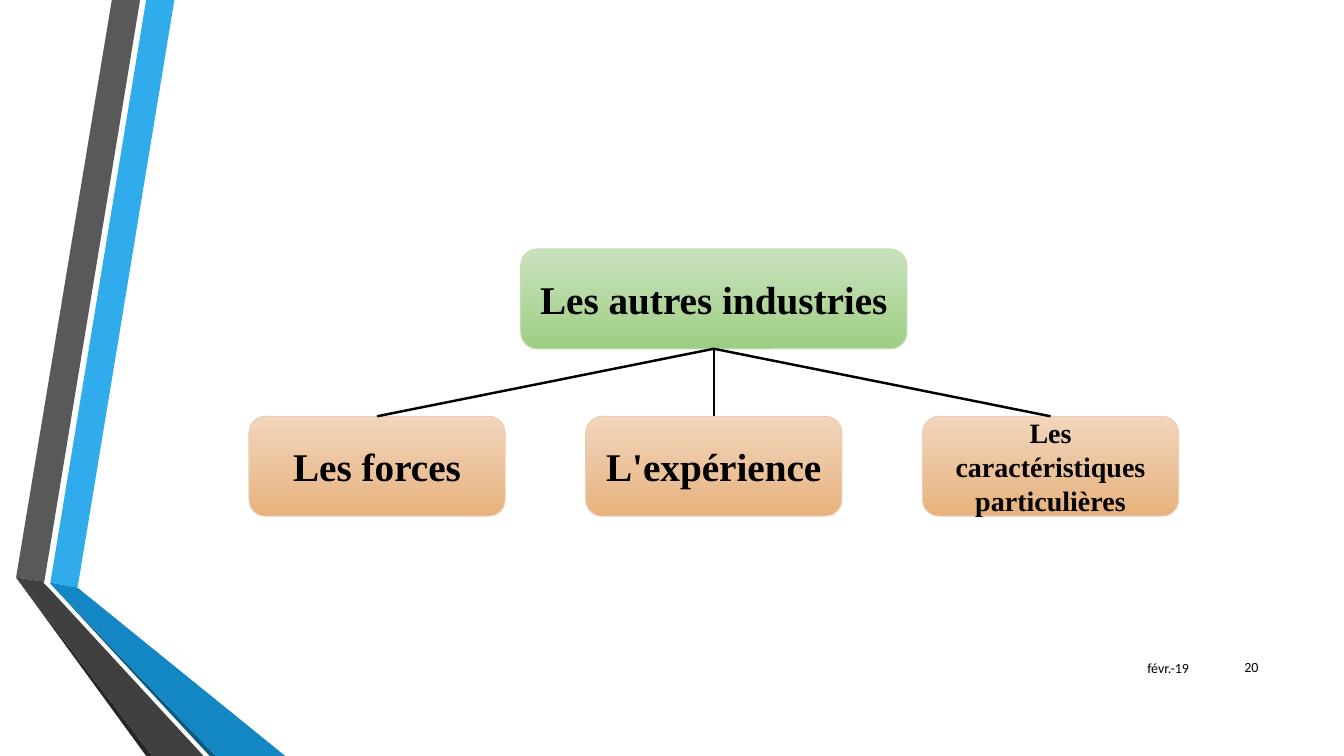
from lxml import etree
from pptx import Presentation
from pptx.dml.color import RGBColor
from pptx.enum.shapes import MSO_CONNECTOR, MSO_SHAPE
from pptx.enum.text import MSO_ANCHOR, PP_ALIGN
from pptx.oxml.ns import qn
from pptx.util import Inches, Pt

STRAIGHT = MSO_CONNECTOR.STRAIGHT
ROUNDED = MSO_SHAPE.ROUNDED_RECTANGLE
MIDDLE = MSO_ANCHOR.MIDDLE
CENTER, RIGHT = PP_ALIGN.CENTER, PP_ALIGN.RIGHT
TOP_SITE, BOTTOM_SITE = 0, 2

COLORS = {
    "black": "000000",
    "blue": "30ACEC", "blue fold": "1287C3", "blue edge": "0C5A82",
    "gray": "595959", "gray fold": "404040", "gray edge": "262626",
}
# top of gradient, bottom of gradient, outline
GREEN = ("C9E2BE", "9ECE83", "C0DEB3")
ORANGE = ("F1D5BD", "E7B27D", "EECCAF")

RIBBONS = [
    ("blue", [(0.5, 5.78), (0.77, 5.83), (1.73, 0), (1.45, 0)]),
    ("gray", [(1.39, 0), (1.11, 0), (0.16, 5.73), (0.44, 5.77)]),
    ("gray edge", [(0.16, 5.73), (1.45, 7.5), (1.51, 7.5)]),
    ("blue edge", [(0.5, 5.79), (2.08, 7.5), (2.14, 7.5)]),
    ("blue fold", [(0.5, 5.79), (2.14, 7.5), (2.83, 7.5), (0.77, 5.83), (0.5, 5.78)]),
    ("gray fold", [(2.02, 7.5), (0.48, 5.83), (0.43, 5.78), (0.44, 5.77),
                   (0.16, 5.73), (1.51, 7.5)]),
]

ROOT = "Les autres industries"
BRANCHES = [("Les forces", 28), ("L'expérience", 28),
            ("Les caractéristiques particulières", 20)]
FOOTERS = [("févr.-19", 10.64, 6.43, 1.25), ("20", 11.98, 6.42, 0.6)]

CENTER_X = 7.08
ROOT_TOP, BRANCH_TOP = 2.47, 4.13
ROOT_WIDTH, BRANCH_WIDTH, BOX_HEIGHT = 3.83, 2.54, 0.99
BRANCH_PITCH = 3.34


def rgb(name):
    return RGBColor.from_string(COLORS.get(name, name))


def write(shape, text, size, font="Times New Roman", bold=True, align=CENTER):
    frame = shape.text_frame
    frame.word_wrap = True
    frame.vertical_anchor = MIDDLE
    paragraph = frame.paragraphs[0]
    paragraph.alignment = align
    run = paragraph.add_run()
    run.text = text
    run.font.size = Pt(size)
    run.font.name = font
    run.font.bold = bold
    run.font.color.rgb = rgb("black")


def add_ribbon(slide, color, points):
    corners = [(Inches(x), Inches(y)) for x, y in points]
    builder = slide.shapes.build_freeform(*corners[0])
    builder.add_line_segments(corners[1:], close=True)
    ribbon = builder.convert_to_shape()
    ribbon.shadow.inherit = False
    ribbon.fill.solid()
    ribbon.fill.fore_color.rgb = rgb(color)
    ribbon.line.fill.background()


def add_box(slide, text, size, center, top, width, palette):
    box = slide.shapes.add_shape(ROUNDED, Inches(center - width / 2), Inches(top),
                                 Inches(width), Inches(BOX_HEIGHT))
    box.shadow.inherit = False
    box.fill.gradient()
    box.fill.gradient_angle = 270
    for stop, color in zip(box.fill.gradient_stops, palette):
        stop.color.rgb = rgb(color)
    box.line.color.rgb = rgb(palette[2])
    box.line.width = Pt(0.75)
    write(box, text, size)
    return box


def join(slide, parent, child):
    link = slide.shapes.add_connector(STRAIGHT, 0, 0, 0, 0)
    link.begin_connect(parent, BOTTOM_SITE)
    link.end_connect(child, TOP_SITE)
    link.line.color.rgb = rgb("black")
    link.line.width = Pt(1.75)
    etree.SubElement(link.element.spPr, qn("a:effectLst"))


def main():
    prs = Presentation()
    prs.slide_width, prs.slide_height = Inches(13.33), Inches(7.5)
    slide = prs.slides.add_slide(prs.slide_layouts[6])

    for color, points in RIBBONS:
        add_ribbon(slide, color, points)

    root = add_box(slide, ROOT, 28, CENTER_X, ROOT_TOP, ROOT_WIDTH, GREEN)
    for position, (text, size) in enumerate(BRANCHES, start=-1):
        center = CENTER_X + position * BRANCH_PITCH
        branch = add_box(slide, text, size, center, BRANCH_TOP, BRANCH_WIDTH, ORANGE)
        join(slide, root, branch)

    for text, left, top, width in FOOTERS:
        footer = slide.shapes.add_textbox(Inches(left), Inches(top),
                                          Inches(width), Inches(0.4))
        write(footer, text, 10, font="Calibri", bold=False, align=RIGHT)

    prs.save("out.pptx")


if __name__ == "__main__":
    main()
